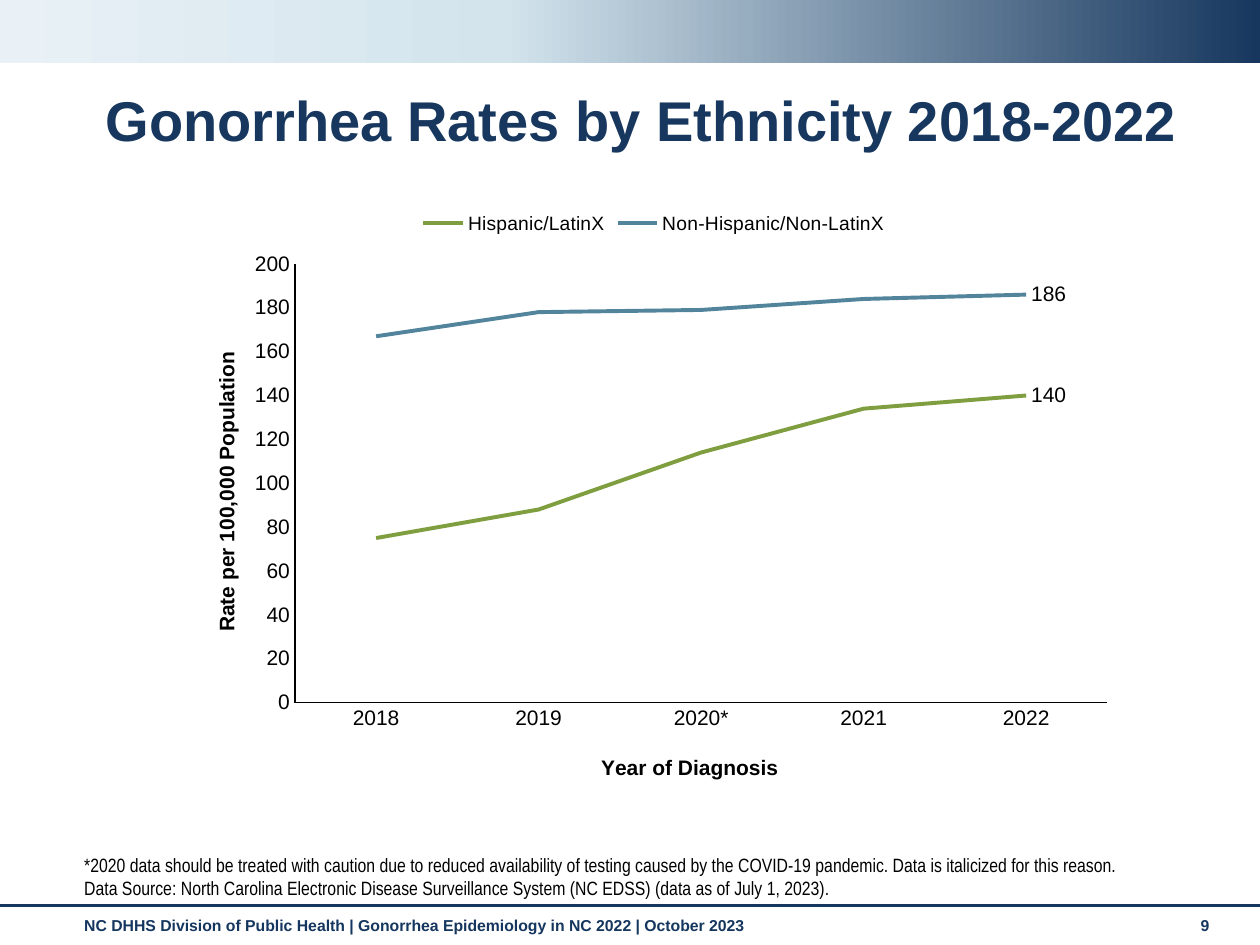
from copy import deepcopy
from dataclasses import dataclass

from lxml.etree import SubElement
from pptx import Presentation
from pptx.chart.data import CategoryChartData
from pptx.dml.color import RGBColor
from pptx.enum.chart import XL_CHART_TYPE, XL_LABEL_POSITION, XL_LEGEND_POSITION, XL_TICK_MARK
from pptx.enum.shapes import MSO_CONNECTOR, MSO_SHAPE
from pptx.enum.text import MSO_ANCHOR
from pptx.oxml import parse_xml
from pptx.oxml.ns import nsdecls, qn
from pptx.util import Emu, Pt

PX = 9144  # 100 px to the inch


@dataclass(frozen=True)
class Theme:
    navy: str = "17375E"
    footer: str = "15365E"
    black: str = "000000"
    band: tuple = ((0, "17375E"), (0.6, "D3E4ED"), (1, "E9F1F6"))
    font: str = "Arial"
    narrow: str = "Arial Narrow"
    title: int = 32
    axis: int = 12
    legend: int = 11
    note: int = 11
    small: int = 9


@dataclass(frozen=True)
class Box:
    x: int
    y: int
    w: int
    h: int

    def emu(self) -> tuple:
        return tuple(Emu(v * PX) for v in (self.x, self.y, self.w, self.h))


@dataclass(frozen=True)
class RateSeries:
    name: str
    values: tuple
    color: str


T = Theme()
YEARS = ("2018", "2019", "2020*", "2021", "2022")
RATES = (
    RateSeries("Hispanic/LatinX", (75, 88, 114, 134, 140), "7F9E3F"),
    RateSeries("Non-Hispanic/Non-LatinX", (167, 178, 179, 184, 186), "52849C"),
)


def rgb(color: str) -> RGBColor:
    return RGBColor.from_string(color)


def set_font(font, size: int, color: str = T.black, bold: bool = False, name: str = T.font) -> None:
    font.name, font.size, font.bold = name, Pt(size), bold
    font.color.rgb = rgb(color)


def add_text(s, box: Box, *lines: str, size: int, color: str = T.black, bold: bool = False,
             name: str = T.font, anchor=MSO_ANCHOR.TOP, spacing: float = 1.0) -> None:
    tf = s.shapes.add_textbox(*box.emu()).text_frame
    tf.word_wrap = True
    tf.vertical_anchor = anchor
    for i, line in enumerate(lines):
        p = tf.paragraphs[0] if i == 0 else tf.add_paragraph()
        p.line_spacing = spacing
        r = p.add_run()
        r.text = line
        set_font(r.font, size, color, bold, name)


def add_band(s, box: Box) -> None:
    sp = s.shapes.add_shape(MSO_SHAPE.RECTANGLE, *box.emu())
    sp.shadow.inherit = False
    sp.line.fill.background()
    sp.fill.gradient()
    sp.fill.gradient_angle = 180
    last = sp.fill._fill._gradFill.gsLst[-1]
    last.addnext(deepcopy(last))
    for stop, (position, color) in zip(sp.fill.gradient_stops, T.band):
        stop.position = position
        stop.color.rgb = rgb(color)


def add_rule(s, y: int, width: int) -> None:
    line = s.shapes.add_connector(MSO_CONNECTOR.STRAIGHT, 0, Emu(y * PX), Emu(width * PX), Emu(y * PX))
    line.line.color.rgb = rgb(T.navy)
    line.line.width = Pt(1.75)
    SubElement(line._element.spPr, qn("a:effectLst"))


def layout_xml(inner: bool = False, **fractions: float):
    """Manual chart layout, in fractions of the chart area."""
    target = '<c:layoutTarget val="inner"/>' if inner else ""
    modes = "".join(f'<c:{k}Mode val="edge"/>' for k in "xy")
    sizes = "".join(f'<c:{k} val="{v}"/>' for k, v in fractions.items())
    return parse_xml(f'<c:layout {nsdecls("c")}><c:manualLayout>{target}{modes}{sizes}'
                     '</c:manualLayout></c:layout>')


def style_axis(axis, title: str, x: float, y: float) -> None:
    axis.has_major_gridlines = False
    axis.major_tick_mark = axis.minor_tick_mark = XL_TICK_MARK.NONE
    axis.format.line.color.rgb = rgb(T.black)
    axis.format.line.width = Pt(0.75)
    set_font(axis.tick_labels.font, T.axis)
    r = axis.axis_title.text_frame.paragraphs[0].add_run()
    r.text = title
    set_font(r.font, T.axis, bold=True)
    element = axis.axis_title._element
    for old in element.findall(qn("c:layout")):
        element.remove(old)
    element.find(qn("c:tx")).addnext(layout_xml(x=x, y=y))


def add_rate_chart(s, box: Box) -> None:
    data = CategoryChartData(number_format="#,##0")
    data.categories = YEARS
    for rate in RATES:
        data.add_series(rate.name, rate.values)
    chart = s.shapes.add_chart(XL_CHART_TYPE.LINE, *box.emu(), data).chart
    set_font(chart.font, 10)
    chart.has_title = False
    chart.has_legend = True
    chart.legend.position = XL_LEGEND_POSITION.TOP
    chart.legend.include_in_layout = False
    set_font(chart.legend.font, T.legend)

    # Axes and plot area
    style_axis(chart.category_axis, "Year of Diagnosis", 0.44, 0.92)
    style_axis(chart.value_axis, "Rate per 100,000 Population", 0.03, 0.25)
    chart.value_axis.minimum_scale, chart.value_axis.maximum_scale = 0, 200
    chart.value_axis.major_unit = 20
    plot_area = chart._chartSpace.chart.plotArea
    for old in plot_area.findall(qn("c:layout")):
        plot_area.remove(old)
    plot_area.insert(0, layout_xml(inner=True, x=0.12, y=0.11, w=0.86, h=0.73))

    # Lines, with a value at the last year only
    chart.plots[0].vary_by_categories = False
    for series, rate in zip(chart.plots[0].series, RATES):
        series.smooth = False
        series.format.line.color.rgb = rgb(rate.color)
        series.format.line.width = Pt(2.25)
        label = series.points[len(YEARS) - 1].data_label
        label.position = XL_LABEL_POSITION.RIGHT
        set_font(label.font, T.axis)
        series.data_labels.show_value = False


def main() -> None:
    prs = Presentation()
    prs.slide_width, prs.slide_height = Emu(1000 * PX), Emu(750 * PX)
    s = prs.slides.add_slide(prs.slide_layouts[6])

    # Header band and footer
    add_band(s, Box(0, 0, 1000, 50))
    add_rule(s, 719, 1000)
    footer = dict(size=T.small, color=T.footer, bold=True)
    add_text(s, Box(57, 722, 874, 29),
             "NC DHHS Division of Public Health | Gonorrhea Epidemiology in NC 2022 | October 2023", **footer)
    add_text(s, Box(943, 722, 44, 30), "9", **footer)

    # Title, chart and notes
    add_text(s, Box(74, 68, 880, 60), "Gonorrhea Rates by Ethnicity 2018-2022", size=T.title,
             color=T.navy, bold=True, anchor=MSO_ANCHOR.MIDDLE, spacing=0.9)
    add_rate_chart(s, Box(144, 157, 750, 477))
    add_text(s, Box(57, 683, 910, 36),
             "*2020 data should be treated with caution due to reduced availability of testing caused by "
             "the COVID-19 pandemic. Data is italicized for this reason.",
             "Data Source: North Carolina Electronic Disease Surveillance System (NC EDSS) "
             "(data as of July 1, 2023).",
             size=T.note, name=T.narrow, anchor=MSO_ANCHOR.BOTTOM)

    prs.save("out.pptx")


if __name__ == "__main__":
    main()
